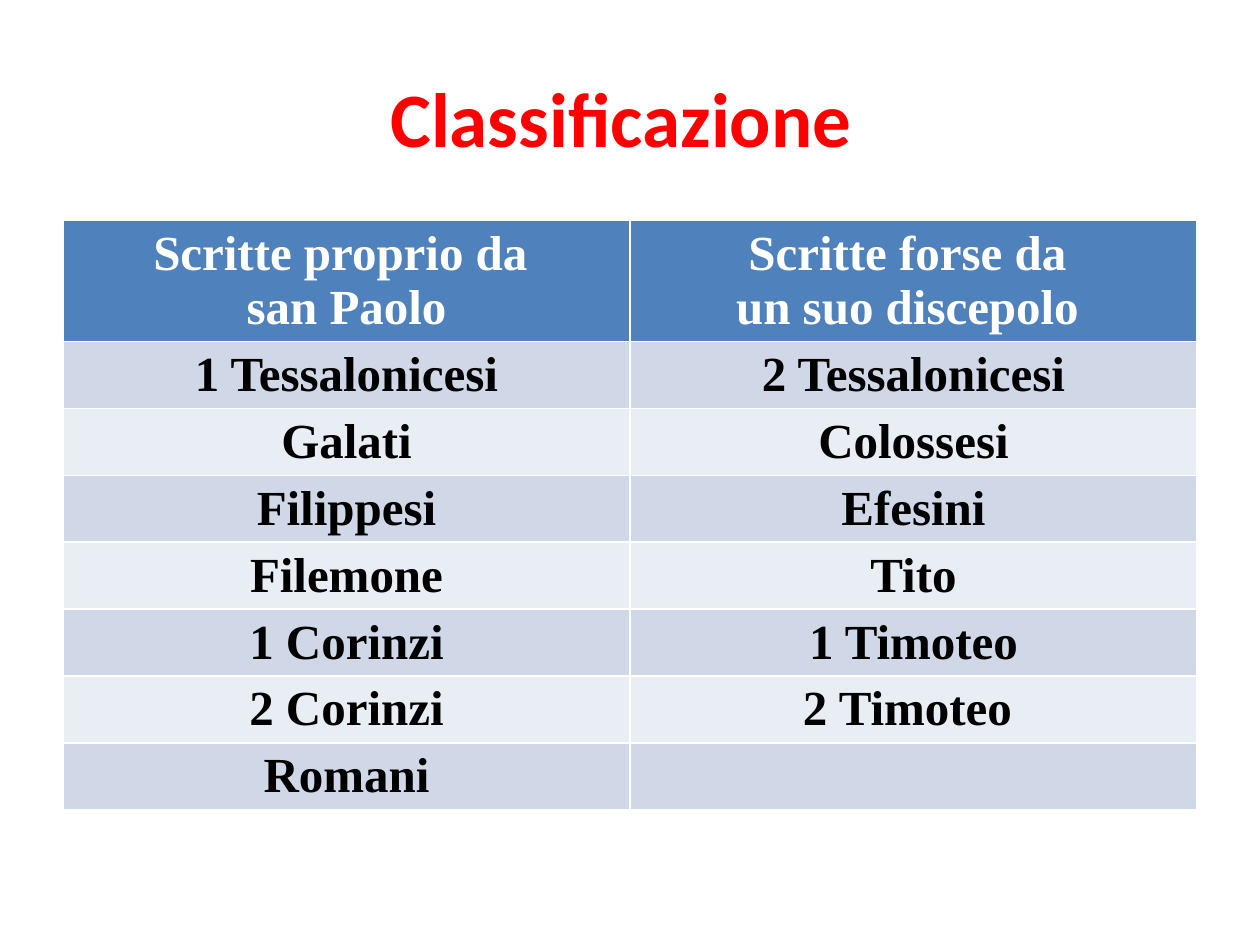
import pptx
import pptx.dml.color
import pptx.enum.text
import pptx.util

Inches = pptx.util.Inches

HEADER_FILL = "4F81BD"
BAND_FILLS = ("D0D8E8", "E9EDF4")
HEADER_HEIGHT = 0.95
ROW_HEIGHT = 0.53
HEADERS = ("Scritte proprio da \nsan Paolo", "Scritte forse da \nun suo discepolo ")
LETTERS = (
    ("1 Tessalonicesi", "2 Tessalonicesi"),
    ("Galati", "Colossesi"),
    ("Filippesi", "Efesini"),
    ("Filemone", "Tito"),
    ("1 Corinzi", "1 Timoteo"),
    ("2 Corinzi", "2 Timoteo "),
    ("Romani", ""),
)


def rgb(value):
    """Turn a hex string into a colour."""
    return pptx.dml.color.RGBColor.from_string(value)


def write_text(text_frame, text, *, size, font, color, bold=True):
    """Write centred text, one paragraph per line."""
    text_frame.text = text
    for paragraph in text_frame.paragraphs:
        paragraph.alignment = pptx.enum.text.PP_ALIGN.CENTER
        for run in paragraph.runs:
            run.font.size = pptx.util.Pt(size)
            run.font.name = font
            run.font.bold = bold
            run.font.color.rgb = rgb(color)


def add_title(slide, left, top, width, height):
    """Place and fill the title placeholder."""
    title = slide.shapes.title
    title.left, title.top = Inches(left), Inches(top)
    title.width, title.height = Inches(width), Inches(height)
    title.text_frame.vertical_anchor = pptx.enum.text.MSO_ANCHOR.MIDDLE
    write_text(title.text_frame, "Classificazione ", size=44, font="Calibri", color="FF0000")


def add_letters_table(slide, left, top, width):
    """Add the banded table of letters under its two headings."""
    rows = (HEADERS, *LETTERS)
    height = HEADER_HEIGHT + ROW_HEIGHT * len(LETTERS)
    table = slide.shapes.add_table(
        len(rows), len(HEADERS), Inches(left), Inches(top), Inches(width), Inches(height)
    ).table
    for row_index, texts in enumerate(rows):
        is_header = row_index == 0
        table.rows[row_index].height = Inches(HEADER_HEIGHT if is_header else ROW_HEIGHT)
        fill = HEADER_FILL if is_header else BAND_FILLS[(row_index - 1) % 2]
        color = "FFFFFF" if is_header else "000000"
        for column_index, text in enumerate(texts):
            cell = table.cell(row_index, column_index)
            cell.fill.solid()
            cell.fill.fore_color.rgb = rgb(fill)
            write_text(cell.text_frame, text, size=28, font="Times New Roman", color=color)


def main():
    """Build and save the presentation."""
    presentation = pptx.Presentation()
    presentation.slide_width = Inches(10)
    presentation.slide_height = Inches(7.5)
    slide = presentation.slides.add_slide(presentation.slide_layouts.get_by_name("Title Only"))
    add_title(slide, 0.5, 0.3, 9, 1.25)
    add_letters_table(slide, 0.5, 1.75, 9)
    presentation.save("out.pptx")


if __name__ == "__main__":
    main()
